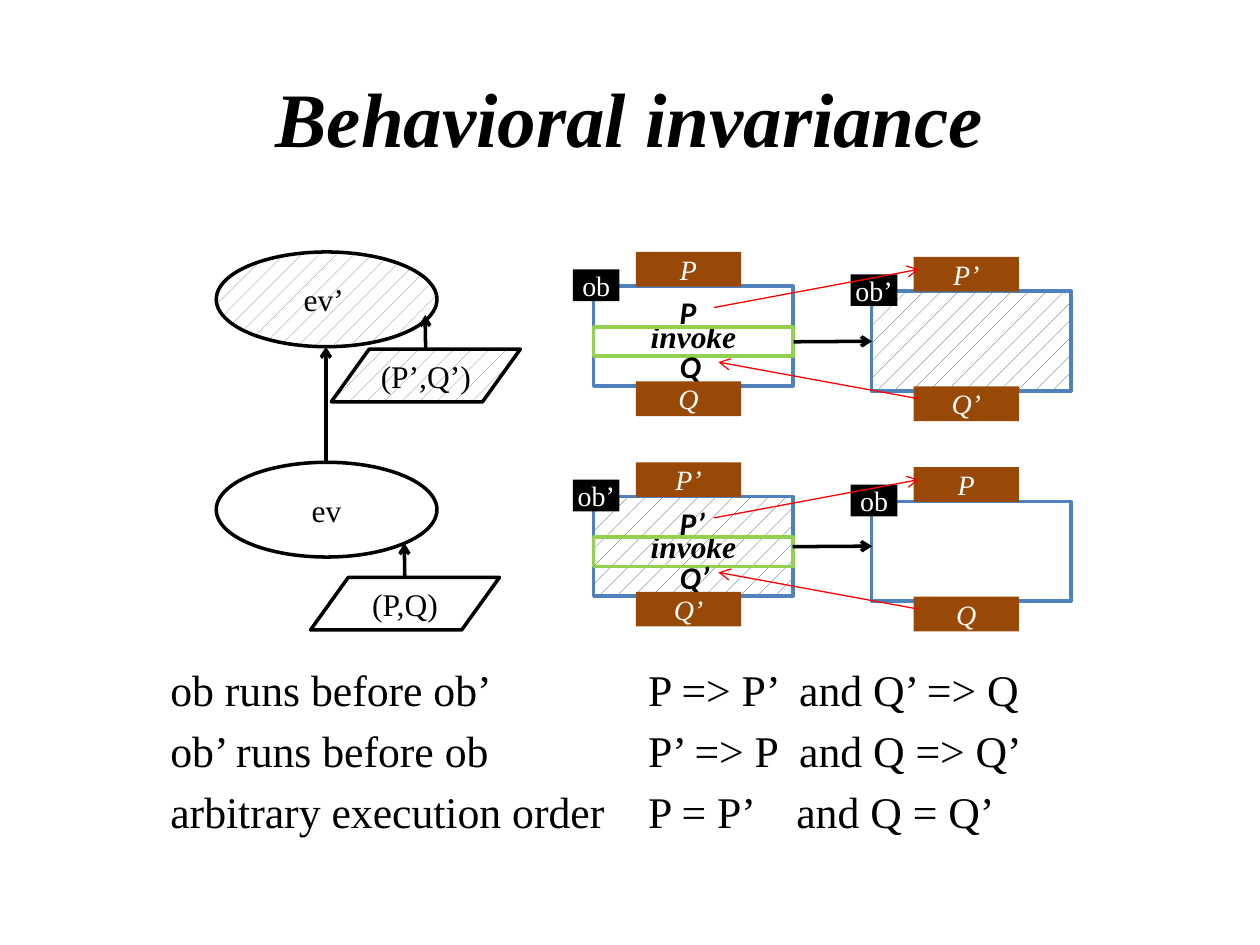
from dataclasses import dataclass

from lxml import etree
from pptx import Presentation
from pptx.dml.color import RGBColor
from pptx.enum.dml import MSO_PATTERN
from pptx.enum.shapes import MSO_CONNECTOR, MSO_SHAPE
from pptx.enum.text import MSO_ANCHOR, PP_ALIGN
from pptx.oxml.ns import qn
from pptx.util import Cm, Pt

RECTANGLE = MSO_SHAPE.RECTANGLE
ELLIPSE = MSO_SHAPE.OVAL
PARALLELOGRAM = MSO_SHAPE.FLOWCHART_DATA
STRAIGHT = MSO_CONNECTOR.STRAIGHT
HATCH = MSO_PATTERN.PERCENT_5
MIDDLE, TOP = MSO_ANCHOR.MIDDLE, MSO_ANCHOR.TOP
CENTER, LEFT = PP_ALIGN.CENTER, PP_ALIGN.LEFT

COLORS = {
    "black": "000000",
    "white": "FFFFFF",
    "blue": "4F81BD",
    "navy": "1F497D",
    "green": "92D050",
    "brown": "984807",
    "red": "FF0000",
}
SERIF, SANS = "Times New Roman", "Calibri"
DROP = 4.24  # distance from the upper to the lower half of the diagram
BODY_WIDTH, BODY_HEIGHT = 4.02, 2.01


@dataclass
class Style:
    size: float
    color: str = "black"
    bold: bool = False
    italic: bool = False
    font: str = SERIF


@dataclass
class Box:
    left: float
    top: float
    width: float
    height: float

    def lengths(self) -> list:
        return [Cm(n) for n in (self.left, self.top, self.width, self.height)]


@dataclass
class Node:
    text: str
    kind: int
    box: Box
    hatched: bool = False


@dataclass
class ObjectBox:
    name: str
    pre: str
    post: str
    left: float
    top: float
    hatched: bool = False
    invokes: bool = False


@dataclass
class Arrow:
    start: tuple[float, float]
    end: tuple[float, float]
    color: str = "black"
    width: float = 2


LABEL = Style(18)
INVOKE = Style(18, bold=True, italic=True)
CONDITION = Style(18, bold=True, italic=True, font=SANS)
TAB = Style(16, "white", italic=True)
NAME = Style(16, "white")

NODES = [
    Node("ev", ELLIPSE, Box(4.36, 5.08 + DROP, 4.45, 1.91)),
    Node("ev’ ", ELLIPSE, Box(4.36, 5.08, 4.45, 1.91), hatched=True),
    Node("(P,Q)", PARALLELOGRAM, Box(6.26, 11.64, 3.81, 1.06)),
    Node("(P’,Q’)", PARALLELOGRAM, Box(6.68, 7.04, 3.81, 1.06), hatched=True),
]
OBJECTS = [
    ObjectBox("ob", "P", "Q", 11.97, 5.77, invokes=True),
    ObjectBox("ob’", "P’", "Q’", 17.57, 5.87, hatched=True),
    ObjectBox("ob’", "P’", "Q’", 11.97, 5.77 + DROP, hatched=True, invokes=True),
    ObjectBox("ob", "P", "Q", 17.57, 5.87 + DROP),
]
ARROWS = [
    Arrow((6.57, 9.32), (6.57, 6.99)),
    Arrow((8.16, 11.64), (8.15, 10.95)),
    Arrow((8.58, 7.04), (8.57, 6.35)),
    Arrow((16, 6.89), (17.58, 6.88)),
    Arrow((15.98, 11.02), (17.58, 11.01)),
]
for drop in (0, DROP):
    ARROWS += [
        Arrow((14.39, 6.2 + drop), (18.52, 5.43 + drop), "red", 0.75),
        Arrow((18.52, 8.04 + drop), (14.48, 7.3 + drop), "red", 0.75),
    ]
RULES = [
    ("ob runs before ob’", "P => P’  and Q’ => Q"),
    ("ob’ runs before ob", "P’ => P  and Q => Q’"),
    ("arbitrary execution order", "P = P’    and Q = Q’"),
]


def rgb(name: str) -> RGBColor:
    return RGBColor.from_string(COLORS[name])


def write(frame, text: str, style: Style, align=CENTER) -> None:
    frame.text = text
    para = frame.paragraphs[0]
    para.alignment = align
    font = para.font
    font.name, font.size = style.font, Pt(style.size)
    font.bold, font.italic = style.bold, style.italic
    font.color.rgb = rgb(style.color)


def draw_shape(shapes, kind, box: Box, text="", style=LABEL, fill=None, hatch=None, line=None) -> None:
    shape = shapes.add_shape(kind, *box.lengths())
    shape.shadow.inherit = False
    if hatch:
        shape.fill.patterned()
        shape.fill.pattern = HATCH
        shape.fill.fore_color.rgb = rgb(hatch)
        shape.fill.back_color.rgb = rgb("white")
    elif fill:
        shape.fill.solid()
        shape.fill.fore_color.rgb = rgb(fill)
    else:
        shape.fill.background()
    if line:
        shape.line.color.rgb = rgb(line)
        shape.line.width = Pt(2)
    else:
        shape.line.fill.background()
    if text:
        frame = shape.text_frame
        frame.margin_left = frame.margin_right = frame.margin_top = frame.margin_bottom = 0
        frame.vertical_anchor = MIDDLE
        write(frame, text, style)


def draw_text(shapes, box: Box, text: str, style: Style, align=LEFT, anchor=TOP) -> None:
    frame = shapes.add_textbox(*box.lengths()).text_frame
    frame.word_wrap = True
    frame.vertical_anchor = anchor
    write(frame, text, style, align)


def draw_object(page, item: ObjectBox) -> None:
    """Draw an object with its name, its pre- and postcondition, and its call if it makes one."""
    shapes = page.shapes.add_group_shape().shapes

    def place(right: float, down: float, width: float, height: float) -> Box:
        return Box(item.left + right, item.top + down, width, height)

    draw_shape(shapes, RECTANGLE, place(0, 0, BODY_WIDTH, BODY_HEIGHT),
               "invoke" if item.invokes else "", INVOKE,
               hatch="navy" if item.hatched else None, line="blue")
    if item.invokes:
        draw_shape(shapes, RECTANGLE, place(0, 0.82, BODY_WIDTH, 0.59), line="green")
        for text, down in ((item.pre, 0.02), (item.post, 1.11)):
            draw_text(shapes, place(1.48, down, 1.3, 1.02), text, CONDITION)
    for text, down in ((item.post, 1.92), (item.pre, -0.69)):
        draw_shape(shapes, RECTANGLE, place(0.85, down, 2.12, 0.7), text, TAB, fill="brown")
    draw_shape(shapes, RECTANGLE, place(-0.42, -0.34, 0.94, 0.64), item.name, NAME, fill="black")


def draw_arrow(page, arrow: Arrow) -> None:
    points = [Cm(n) for n in (*arrow.start, *arrow.end)]
    connector = page.shapes.add_connector(STRAIGHT, *points)
    connector.line.color.rgb = rgb(arrow.color)
    connector.line.width = Pt(arrow.width)
    properties = connector.element.spPr
    etree.SubElement(properties.find(qn("a:ln")), qn("a:tailEnd"), type="arrow")
    etree.SubElement(properties, qn("a:effectLst"))


def draw_rules(page) -> None:
    box = Box(3.18, 13.34, 19.26, 3.69)
    table = page.shapes.add_table(len(RULES), 2, *box.lengths()).table
    table.first_row = table.horz_banding = False
    for row, texts in enumerate(RULES):
        for column, text in enumerate(texts):
            cell = table.cell(row, column)
            cell.fill.background()
            cell.margin_top = cell.margin_bottom = Cm(0.07)
            cell.vertical_anchor = MIDDLE
            write(cell.text_frame, text, Style(25), LEFT)


def main() -> None:
    deck = Presentation()
    deck.slide_width, deck.slide_height = Cm(25.4), Cm(19.05)
    page = deck.slides.add_slide(deck.slide_layouts[6])
    draw_text(page.shapes, Box(1.27, 0.76, 22.86, 3.18), "Behavioral invariance",
              Style(44, bold=True, italic=True), CENTER, MIDDLE)
    for node in NODES:
        draw_shape(page.shapes, node.kind, node.box, node.text,
                   hatch="blue" if node.hatched else None, line="black")
    draw_rules(page)
    for item in OBJECTS:
        draw_object(page, item)
    for arrow in ARROWS:
        draw_arrow(page, arrow)
    deck.save("out.pptx")


if __name__ == "__main__":
    main()
